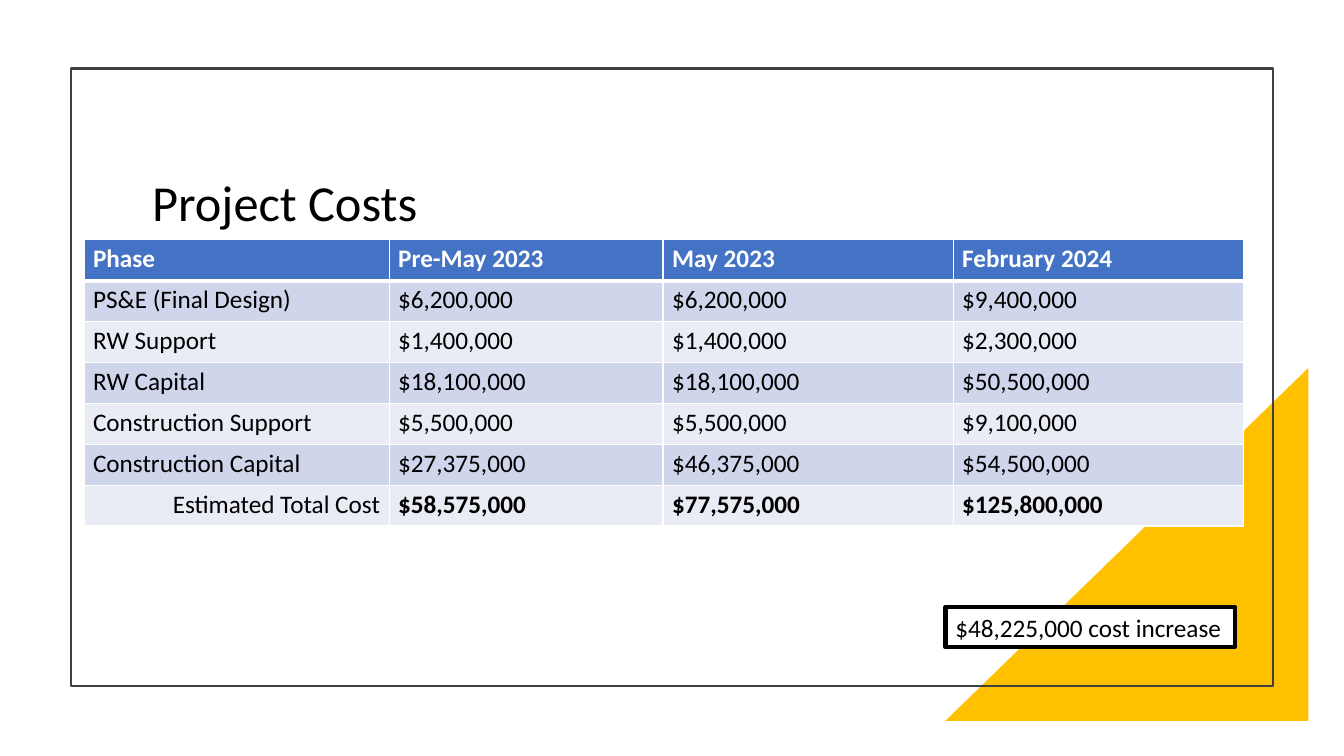
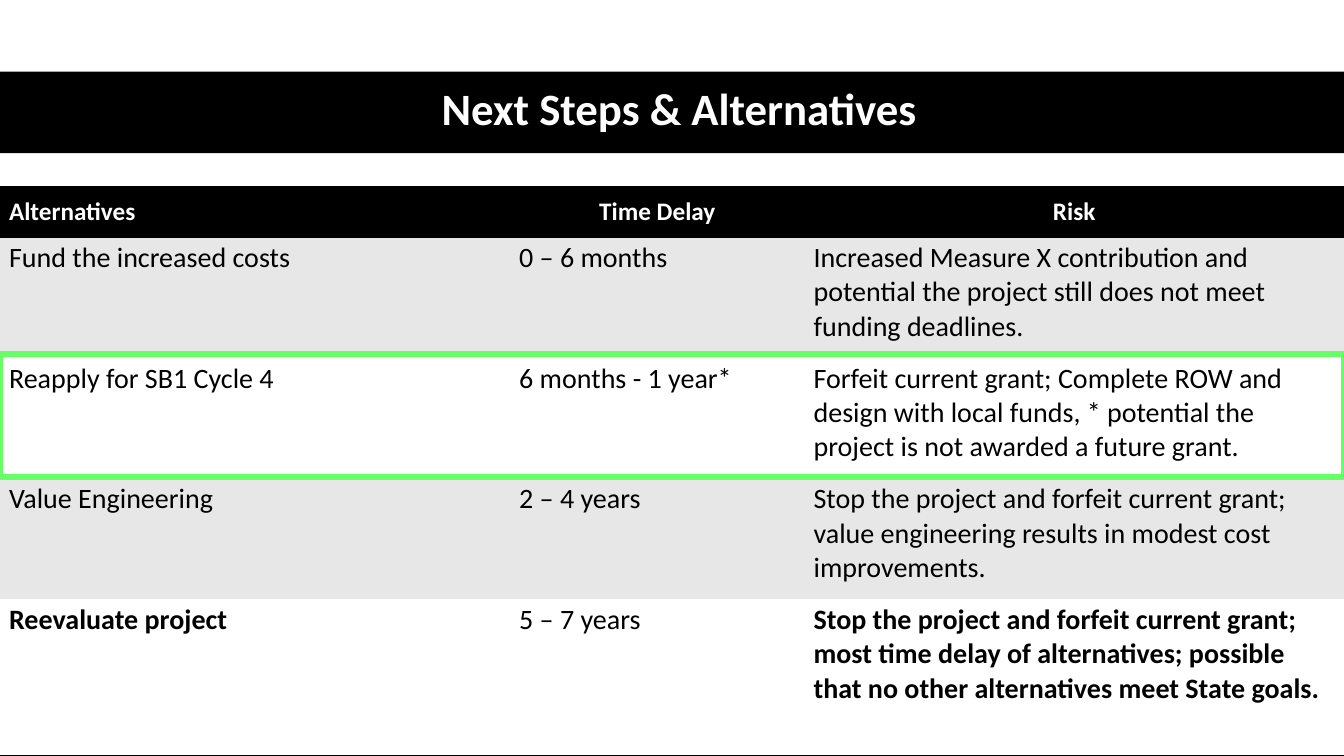
from lxml.etree import SubElement
from pptx import Presentation
from pptx.dml.color import RGBColor
from pptx.enum.shapes import MSO_SHAPE
from pptx.enum.text import MSO_ANCHOR, PP_ALIGN
from pptx.oxml.ns import qn
from pptx.util import Inches, Pt

SLIDE_WIDTH, SLIDE_HEIGHT = Inches(13.33), Inches(7.5)
FONT = "Calibri"
BLACK, WHITE, CHARCOAL = "000000", "FFFFFF", "404040"
AMBER, GREEN = "FFC000", "66FF66"
BLUE, BLUE_BAND, BLUE_PALE, GREY_BAND = "4472C4", "CFD5EA", "E9EBF5", "E7E7E7"
TITLE_ONLY = 5
LEFT, CENTER, RIGHT = PP_ALIGN.LEFT, PP_ALIGN.CENTER, PP_ALIGN.RIGHT
CELL_SIDES = {"left": "a:lnL", "right": "a:lnR", "top": "a:lnT", "bottom": "a:lnB"}

COST_ROWS = [
    ("Phase", "Pre-May 2023", "May 2023", "February 2024"),
    ("PS&E (Final Design)", "$6,200,000", "$6,200,000", "$9,400,000"),
    ("RW Support", "$1,400,000", "$1,400,000", "$2,300,000"),
    ("RW Capital", "$18,100,000", "$18,100,000", "$50,500,000"),
    ("Construction Support", "$5,500,000", "$5,500,000", "$9,100,000"),
    ("Construction Capital", "$27,375,000", "$46,375,000", "$54,500,000"),
    ("Estimated Total Cost", "$58,575,000", "$77,575,000", "$125,800,000"),
]
ALTERNATIVE_ROWS = [
    ("Alternatives", "Time Delay", "Risk"),
    ("Fund the increased costs", "0 – 6 months",
     "Increased Measure X contribution and potential the project still does "
     "not meet funding deadlines."),
    ("Reapply for SB1 Cycle 4", "6 months - 1 year*",
     "Forfeit current grant; Complete ROW and design with local funds, "
     "* potential the project is not awarded a future grant."),
    ("Value Engineering", "2 – 4 years",
     "Stop the project and forfeit current grant; value engineering results "
     "in modest cost improvements."),
    ("Reevaluate project", "5 – 7 years",
     "Stop the project and forfeit current grant; most time delay of "
     "alternatives; possible that no other alternatives meet State goals."),
]


def color(hex_string):
    return RGBColor.from_string(hex_string)


def percent_box(left, top, width, height):
    """Turn percentages of the slide into left, top, width and height."""
    return (round(SLIDE_WIDTH * left / 100), round(SLIDE_HEIGHT * top / 100),
            round(SLIDE_WIDTH * width / 100), round(SLIDE_HEIGHT * height / 100))


def write(frame, text, size, ink=BLACK, bold=False, align=LEFT, line_spacing=1.0):
    frame.text = text
    paragraph = frame.paragraphs[0]
    paragraph.alignment = align
    paragraph.line_spacing = line_spacing
    font_format = {"name": FONT, "size": Pt(size), "bold": bold}
    for name, value in font_format.items():
        setattr(paragraph.runs[0].font, name, value)
    paragraph.runs[0].font.color.rgb = color(ink)


def add_box(slide, box, fill=None, line=None, line_width=1, preset=MSO_SHAPE.RECTANGLE):
    shape = slide.shapes.add_shape(preset, *box)
    shape.shadow.inherit = False
    if fill:
        shape.fill.solid()
        shape.fill.fore_color.rgb = color(fill)
    else:
        shape.fill.background()
    if line:
        shape.line.color.rgb = color(line)
        shape.line.width = Pt(line_width)
    else:
        shape.line.fill.background()
    return shape


def set_title(slide, box, text, size, **text_format):
    title = slide.shapes.title
    for name, value in zip(("left", "top", "width", "height"), box):
        setattr(title, name, value)
    write(title.text_frame, text, size, line_spacing=0.9, **text_format)
    title.text_frame.vertical_anchor = MSO_ANCHOR.MIDDLE


def set_borders(cell, borders):
    """Draw the sides in borders, {side: (colour, points)}, and clear the others."""
    properties = cell._tc.get_or_add_tcPr()
    for position, (side, tag) in enumerate(CELL_SIDES.items()):
        line = SubElement(properties, qn(tag))
        properties.insert(position, line)
        if side in borders:
            ink, points = borders[side]
            line.set("w", str(Pt(points)))
            fill = SubElement(line, qn("a:solidFill"))
            SubElement(fill, qn("a:srgbClr")).set("val", ink)
        else:
            SubElement(line, qn("a:noFill"))


def add_grid(slide, box, rows, column_weights, row_weights, header_fill, bands,
             cell_format, row_borders):
    """Add a banded table; cell_format and row_borders give what varies by cell."""
    table = slide.shapes.add_table(len(rows), len(rows[0]), *box).table
    for tracks, attribute, weights, length in (
            (table.columns, "width", column_weights, box[2]),
            (table.rows, "height", row_weights, box[3])):
        for track, weight in zip(tracks, weights):
            setattr(track, attribute, round(length * weight / sum(weights)))
    for row, texts in enumerate(rows):
        for column, text in enumerate(texts):
            cell = table.cell(row, column)
            cell.margin_left = cell.margin_right = Inches(0.09)
            cell.margin_top = cell.margin_bottom = Inches(0.04)
            cell.fill.solid()
            cell.fill.fore_color.rgb = color(bands[(row - 1) % 2] if row else header_fill)
            set_borders(cell, row_borders(row))
            write(cell.text_frame, text, **cell_format(row, column))
    return table


def cost_format(row, column):
    last = row == len(COST_ROWS) - 1
    return {"size": 18, "ink": BLACK if row else WHITE,
            "bold": row == 0 or (last and column > 0),
            "align": RIGHT if last and column == 0 else LEFT}


def cost_borders(row):
    borders = dict.fromkeys(CELL_SIDES, (WHITE, 1))
    if row < 2:
        borders["top" if row else "bottom"] = (WHITE, 3)
    return borders


def alternative_format(row, column):
    if row == 0:
        return {"size": 18, "ink": WHITE, "bold": True, "align": CENTER if column else LEFT}
    return {"size": 20, "bold": row == len(ALTERNATIVE_ROWS) - 1 and column != 1}


def alternative_borders(row):
    edge = (BLACK, 2)
    if row == 0:
        return {"top": edge, "bottom": edge}
    return {"bottom": edge} if row == len(ALTERNATIVE_ROWS) - 1 else {}


def build_costs(slide):
    triangle = add_box(slide, percent_box(70.35, 48.67, 27, 46.67), fill=AMBER,
                       preset=MSO_SHAPE.RIGHT_TRIANGLE)
    triangle.element.spPr.xfrm.set("flipH", "1")
    add_box(slide, percent_box(5.25, 9.07, 89.5, 81.73), line=CHARCOAL, line_width=1.5)
    set_title(slide, percent_box(10.57, 15.33, 66.25, 23.6), "Project Costs", 36)
    add_grid(slide, percent_box(6.25, 31.73, 86.25, 37.87), COST_ROWS,
             (3.03, 2.72, 2.88, 2.88), [1] * len(COST_ROWS), BLUE,
             (BLUE_BAND, BLUE_PALE), cost_format, cost_borders)
    callout = add_box(slide, percent_box(70.35, 80.27, 21.53, 5.33), fill=WHITE,
                      line=BLACK, line_width=3)
    write(callout.text_frame, "$48,225,000 cost increase", 18)
    callout.text_frame.word_wrap = False


def build_alternatives(slide):
    band = add_box(slide, percent_box(0, 9.47, 100, 10.8), fill=BLACK)
    slide.shapes.title.element.addprevious(band.element)
    set_title(slide, percent_box(4.57, 9.33, 91.95, 10.8), "Next Steps & Alternatives",
              32, ink=WHITE, bold=True, align=CENTER)
    table = add_grid(slide, percent_box(0, 24.8, 100, 75.2), ALTERNATIVE_ROWS,
                     (5.06, 2.92, 5.35), (0.49, 1.2, 1.2, 1.2, 1.56), BLACK,
                     (GREY_BAND, WHITE), alternative_format, alternative_borders)
    for cell in table.rows[0].cells:
        cell.vertical_anchor = MSO_ANCHOR.MIDDLE
    add_box(slide, percent_box(0, 46.8, 100, 16.27), line=GREEN, line_width=4.5)


def main():
    presentation = Presentation()
    presentation.slide_width, presentation.slide_height = SLIDE_WIDTH, SLIDE_HEIGHT
    for build in (build_costs, build_alternatives):
        build(presentation.slides.add_slide(presentation.slide_layouts[TITLE_ONLY]))
    presentation.save("out.pptx")


if __name__ == "__main__":
    main()
